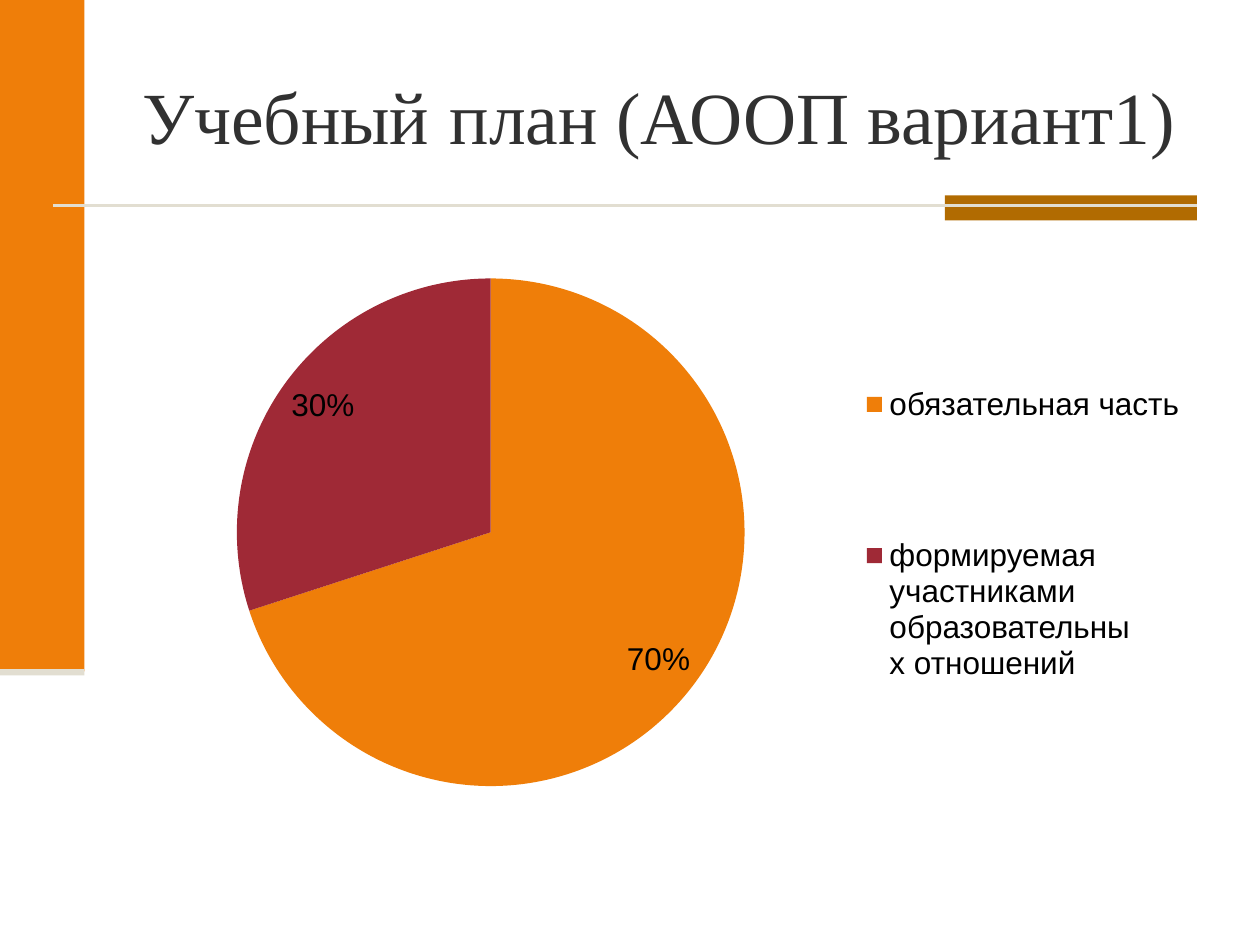
from lxml import etree
from pptx import Presentation
from pptx import util as u
from pptx.chart.data import CategoryChartData
from pptx.dml.color import RGBColor
from pptx.enum import chart as ch, shapes
from pptx.oxml import parse_xml
from pptx.oxml.ns import nsdecls, qn

ORANGE, RED, BROWN, BEIGE = "EF7E09", "9F2936", "B16B01", "E2DED1"
PARTS = [
    (["обязательная часть"], 0.7, ORANGE, 3.06, 2.4),
    (["формируемая", "участниками образовательных отношений"], 0.3, RED, 4.26, 2.0),
]


def color(value):
    return RGBColor.from_string(value)


def add_bar(page, left, top, width, height, fill):
    bar = page.shapes.add_shape(
        shapes.MSO_SHAPE.RECTANGLE, *map(u.Inches, (left, top, width, height)))
    bar.shadow.inherit = False
    bar.fill.solid()
    bar.fill.fore_color.rgb = color(fill)
    bar.line.fill.background()


def add_rule(page, left, right, top):
    rule = page.shapes.add_connector(
        shapes.MSO_CONNECTOR.STRAIGHT, *map(u.Inches, (left, top, right, top)))
    rule.line.color.rgb = color(BEIGE)
    rule.line.width = u.Pt(1.5)
    etree.SubElement(rule._element.spPr, qn("a:effectLst"))


def add_text(page, left, top, width, height, lines, size, font, ink, spacing=None):
    box = page.shapes.add_textbox(*map(u.Inches, (left, top, width, height)))
    frame = box.text_frame
    frame.word_wrap = True
    frame.margin_left = frame.margin_right = frame.margin_top = frame.margin_bottom = 0
    frame.text = "\n".join(lines)
    for para in frame.paragraphs:
        para.line_spacing = spacing
        for span in para.runs:
            span.font.size = u.Pt(size)
            span.font.name = font
            span.font.color.rgb = color(ink)
    return box


def add_tabs(para, *positions):
    tabs = etree.SubElement(para._p.get_or_add_pPr(), qn("a:tabLst"))
    for position in positions:
        etree.SubElement(tabs, qn("a:tab"), pos=str(u.Inches(position)), algn="l")


def add_pie(page, left, top, size):
    data = CategoryChartData(number_format="0%")
    data.categories = [" ".join(lines) for lines, *_ in PARTS]
    data.add_series("Учебный план", [share for _, share, *_ in PARTS])
    pie = page.shapes.add_chart(
        ch.XL_CHART_TYPE.PIE, *map(u.Inches, (left, top, size, size)), data).chart
    pie.has_legend = False
    pie.has_title = False
    pie.font.name = "Arial"
    pie.font.size = u.Pt(18)
    pie.font.color.rgb = color("000000")

    plot = pie.plots[0]
    plot.vary_by_categories = True
    for index, (_, _, fill, *_) in enumerate(PARTS):
        slice_format = plot.series[0].points[index].format
        slice_format.fill.solid()
        slice_format.fill.fore_color.rgb = color(fill)
        slice_format.line.fill.background()
    plot.has_data_labels = True
    labels = plot.data_labels
    labels.show_value = True
    labels.number_format = "0%"
    labels.number_format_is_linked = False
    labels.position = ch.XL_LABEL_POSITION.INSIDE_END

    # The circle fills the whole chart frame
    area = pie._chartSpace.chart.plotArea
    for layout in area.findall(qn("c:layout")):
        area.remove(layout)
    area.insert(0, parse_xml(
        f'<c:layout {nsdecls("c")}><c:manualLayout><c:layoutTarget val="inner"/>'
        '<c:xMode val="edge"/><c:yMode val="edge"/><c:x val="0"/><c:y val="0"/>'
        '<c:w val="1"/><c:h val="1"/></c:manualLayout></c:layout>'))


def main():
    deck = Presentation()
    deck.slide_width, deck.slide_height = u.Inches(10), u.Inches(7.5)
    page = deck.slides.add_slide(deck.slide_layouts[6])

    # Side band, accent and rule
    add_bar(page, 0, 0, 0.67, 5.33, ORANGE)
    add_bar(page, 7.5, 1.55, 2, 0.2, BROWN)
    add_rule(page, 0.42, 9.5, 1.63)
    add_bar(page, 0, 5.31, 0.67, 0.05, BEIGE)

    # Title, with its words set on tab stops
    title = add_text(page, 1.13, 0.56, 8.4, 0.71, ["Учебный\tплан\t(АООП вариант1)"],
                     42, "Times New Roman", "313131")
    add_tabs(title.text_frame.paragraphs[0], 2.44, 3.76)

    # Pie and its legend
    add_pie(page, 1.88, 2.21, 4.03)
    for lines, _, fill, top, width in PARTS:
        add_bar(page, 6.88, top + 0.09, 0.12, 0.12, fill)
        add_text(page, 7.06, top, width, 0.31 if len(lines) == 1 else 1.16, lines,
                 18, "Arial", "000000", u.Pt(20.6))

    deck.save("out.pptx")


if __name__ == "__main__":
    main()
